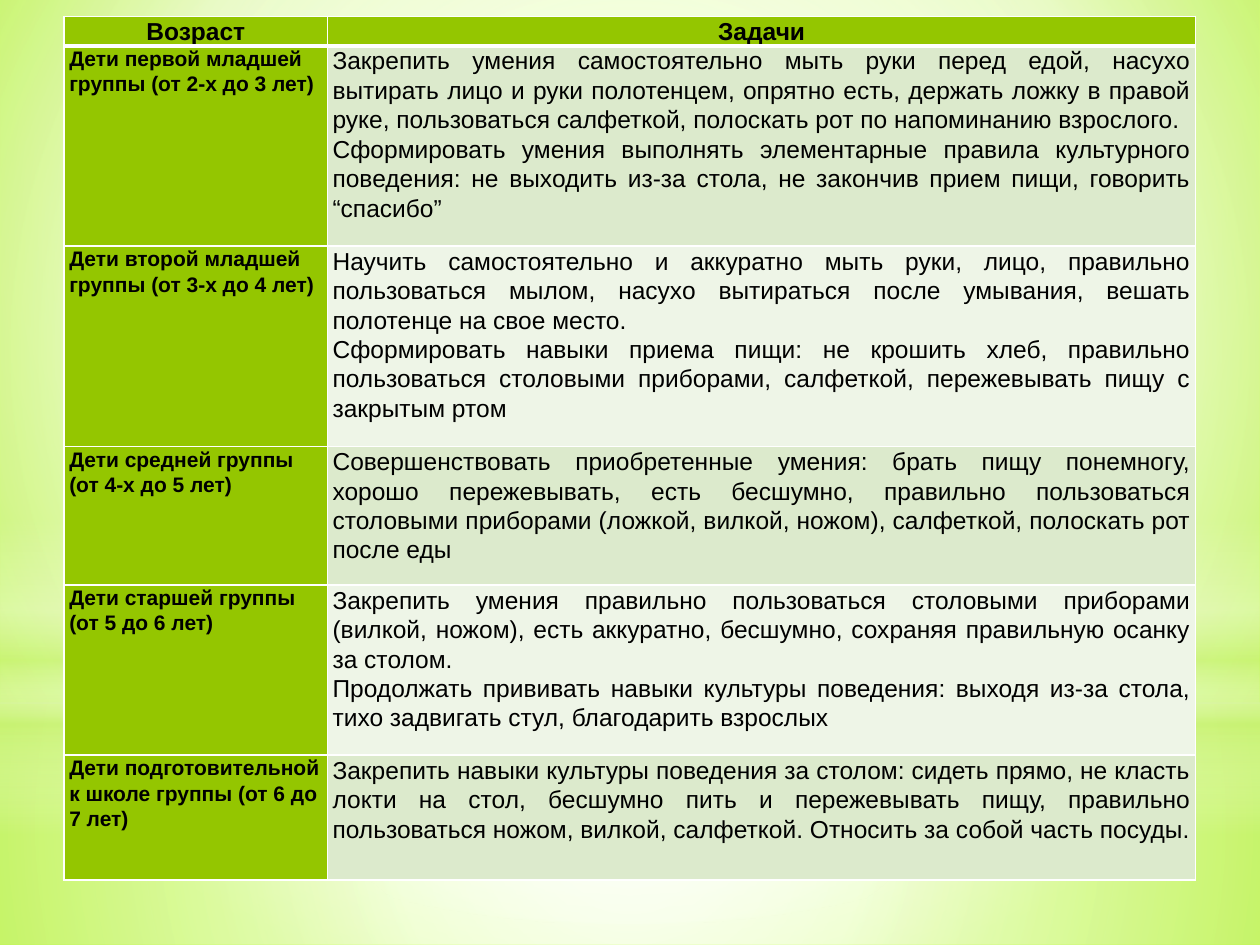
from lxml import etree
from pptx import Presentation
from pptx.dml.color import RGBColor
from pptx.enum.shapes import MSO_SHAPE
from pptx.enum.text import PP_ALIGN
from pptx.oxml import parse_xml
from pptx.oxml.ns import qn
from pptx.util import Inches, Pt

RECTANGLE, OVAL = MSO_SHAPE.RECTANGLE, MSO_SHAPE.OVAL
LEFT, CENTER, JUSTIFY = PP_ALIGN.LEFT, PP_ALIGN.CENTER, PP_ALIGN.JUSTIFY
NAMESPACE = "http://schemas.openxmlformats.org/drawingml/2006/main"
GREEN, PALE, PALER = "94C600", "DCEACC", "EEF5E7"
LIME, WHITE = "CAF278", "FFFFFF"
MIDDLE = (50, 50, 50, 50)


def set_gradient(element, stops, focus=None):
    """Stops are (position %, colour, opacity %); without a focus the gradient runs downwards."""
    gradient = element.find(".//" + qn("a:gradFill"))
    for child in list(gradient):
        gradient.remove(child)
    stop_list = etree.SubElement(gradient, qn("a:gsLst"))
    for position, color, opacity in stops:
        stop = etree.SubElement(stop_list, qn("a:gs"), pos=str(position * 1000))
        color_node = etree.SubElement(stop, qn("a:srgbClr"), val=color)
        etree.SubElement(color_node, qn("a:alpha"), val=str(opacity * 1000))
    if focus:
        circle = etree.SubElement(gradient, qn("a:path"))
        circle.set("path", "circle")
        sides = {side: str(share * 1000) for side, share in zip("ltrb", focus)}
        etree.SubElement(circle, qn("a:fillToRect"), **sides)
    else:
        etree.SubElement(gradient, qn("a:lin"), ang="5400000", scaled="0")


presentation = Presentation()
presentation.slide_width, presentation.slide_height = Inches(10), Inches(7.5)
slide = presentation.slides.add_slide(presentation.slide_layouts[6])

# Background glow
slide.background.fill.gradient()
set_gradient(
    slide.element,
    [(0, "CAFF60", 100), (60, "F7FFE7", 100), (100, "B7FF29", 100)],
    (20, 10, 20, 60),
)
GLOWS = [
    (RECTANGLE, 5.58, 1.92, [(0, WHITE, 91), (37, WHITE, 76), (100, LIME, 79)], MIDDLE),
    (RECTANGLE, 0, 5.58, [(0, WHITE, 89), (48, WHITE, 62), (100, LIME, 79)], MIDDLE),
    (RECTANGLE, 4.12, 2.5, [(0, WHITE, 0), (29, WHITE, 30), (45, LIME, 40),
                            (55, WHITE, 26), (65, LIME, 60), (100, WHITE, 0)], None),
    (OVAL, 1.75, 5.58, [(0, WHITE, 100), (56, WHITE, 0)], MIDDLE),
]
for kind, top, height, stops, focus in GLOWS:
    shape = slide.shapes.add_shape(
        kind, 0, Inches(top), presentation.slide_width, Inches(height))
    shape.shadow.inherit = False
    shape.line.fill.background()
    shape.fill.gradient()
    set_gradient(shape.element, stops, focus)

# Table of ages and tasks
ROWS = [
    ("Возраст", ["Задачи"]),
    ("Дети первой младшей группы (от 2-х до 3 лет)", [
        "Закрепить умения самостоятельно мыть руки перед едой, насухо вытирать лицо и руки "
        "полотенцем, опрятно есть, держать ложку в правой руке, пользоваться салфеткой, "
        "полоскать рот по напоминанию взрослого.",
        "Сформировать умения выполнять элементарные правила культурного поведения: не выходить "
        "из-за стола, не закончив прием пищи, говорить “спасибо”"]),
    ("Дети второй младшей группы (от 3-х до 4 лет)", [
        "Научить самостоятельно и аккуратно мыть руки, лицо, правильно пользоваться мылом, "
        "насухо вытираться после умывания, вешать полотенце на свое место.",
        "Сформировать навыки приема пищи: не крошить хлеб, правильно пользоваться столовыми "
        "приборами, салфеткой, пережевывать пищу с закрытым ртом"]),
    ("Дети средней группы (от 4-х до 5 лет)", [
        "Совершенствовать приобретенные умения: брать пищу понемногу, хорошо пережевывать, "
        "есть бесшумно, правильно пользоваться столовыми приборами (ложкой, вилкой, ножом), "
        "салфеткой, полоскать рот после еды"]),
    ("Дети старшей группы (от 5 до 6 лет)", [
        "Закрепить умения правильно пользоваться столовыми приборами (вилкой, ножом), есть "
        "аккуратно, бесшумно, сохраняя правильную осанку за столом.",
        "Продолжать прививать навыки культуры поведения: выходя из-за стола, тихо задвигать "
        "стул, благодарить взрослых"]),
    ("Дети подготовительной к школе группы (от 6 до 7 лет)", [
        "Закрепить навыки культуры поведения за столом: сидеть прямо, не класть локти на стол, "
        "бесшумно пить и пережевывать пищу, правильно пользоваться ножом, вилкой, салфеткой. "
        "Относить за собой часть посуды."]),
]
COLUMN_WIDTHS = [2.09, 6.89]
ROW_HEIGHTS = [0.23, 1.59, 1.59, 1.1, 1.35, 0.99]

table = slide.shapes.add_table(
    len(ROWS), 2, Inches(0.51), Inches(0.13),
    Inches(sum(COLUMN_WIDTHS)), Inches(sum(ROW_HEIGHTS))).table
for column, width in zip(table.columns, COLUMN_WIDTHS):
    column.width = Inches(width)
for row, height in zip(table.rows, ROW_HEIGHTS):
    row.height = Inches(height)

for row_index, (age, tasks) in enumerate(ROWS):
    for column_index, texts in enumerate([[age], tasks]):
        is_header, is_age = row_index == 0, column_index == 0
        cell = table.cell(row_index, column_index)
        cell.margin_left = cell.margin_right = Inches(0.04)
        cell.margin_top = cell.margin_bottom = 0
        color = GREEN if is_header or is_age else PALE if row_index % 2 else PALER
        cell.fill.solid()
        cell.fill.fore_color.rgb = RGBColor.from_string(color)

        cell.text_frame.text = "\n".join(texts)
        for paragraph in cell.text_frame.paragraphs:
            paragraph.alignment = CENTER if is_header else LEFT if is_age else JUSTIFY
            paragraph.line_spacing = 1.07
            font = paragraph.runs[0].font
            font.name = "Arial"
            font.size = Pt(12 if is_age and not is_header else 14)
            font.bold = is_header or is_age
            font.color.rgb = RGBColor.from_string("000000")

        # The rule under the header is thicker than the other borders
        thick_side = {0: "B", 1: "T"}.get(row_index)
        for position, side in enumerate("LRTB"):
            width = Pt(3 if side == thick_side else 1)
            border = parse_xml(
                f'<a:ln{side} xmlns:a="{NAMESPACE}" w="{width}"><a:solidFill>'
                f'<a:srgbClr val="{WHITE}"/></a:solidFill></a:ln{side}>')
            cell._tc.get_or_add_tcPr().insert(position, border)

presentation.save("out.pptx")
